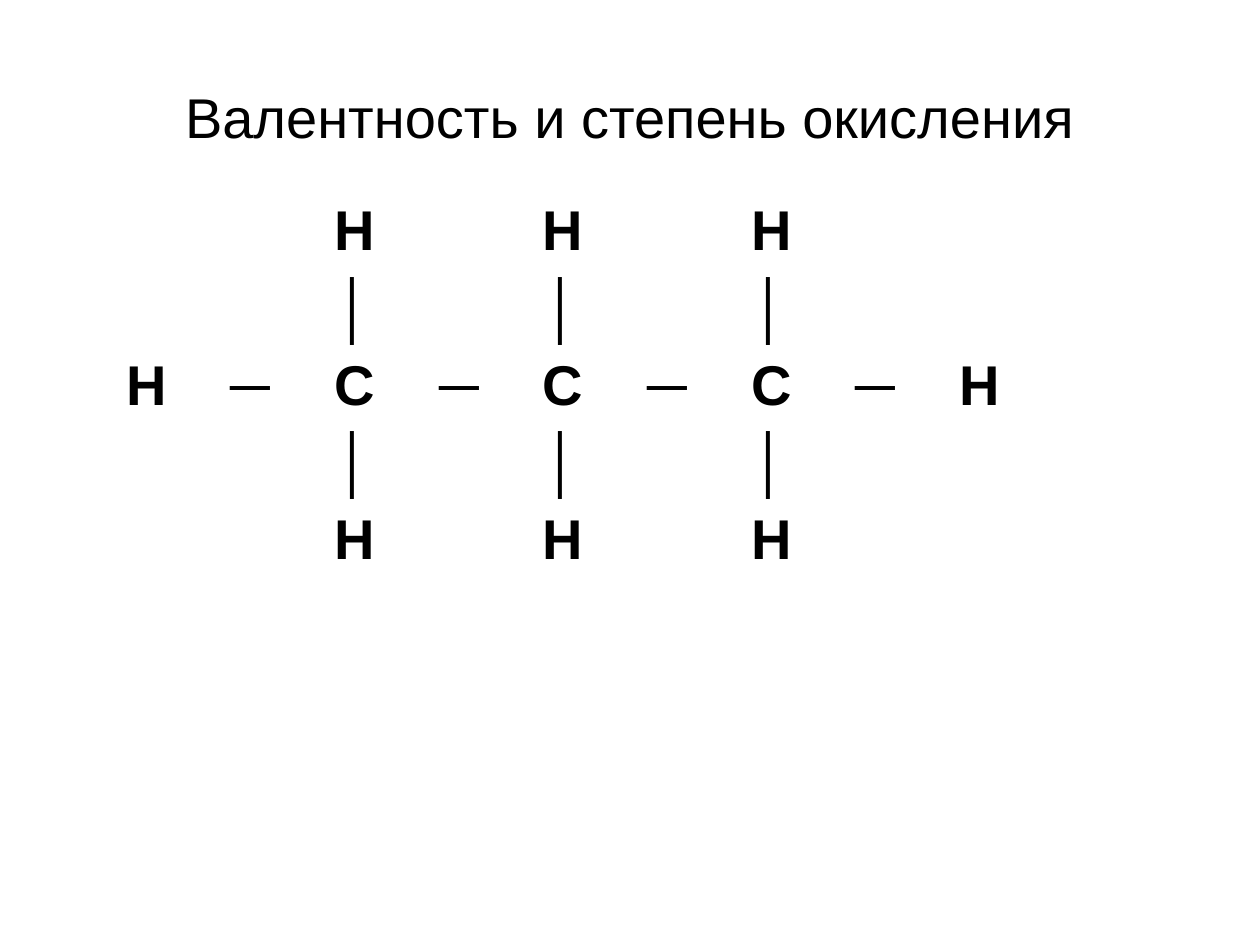
"""Build a slide with the structural formula of propane laid out in a table."""
from pptx import Presentation
from pptx.dml.color import RGBColor
from pptx.enum.text import MSO_ANCHOR as Anchor, PP_ALIGN as Align
from pptx.util import Inches, Pt

TITLE = "Валентность и степень окисления"
FORMULA = [
    "  H H H  ",
    "  │ │ │  ",
    "H─C─C─C─H",
    "  │ │ │  ",
    "  H H H  ",
    "         ",
]
ROW_HEIGHTS = [0.6] * 5 + [0.8]
COLUMN_WIDTH = 7.44 / 9
TITLE_FONT = {"name": "Arial", "size": Pt(32), "bold": False}
ATOM_FONT = {**TITLE_FONT, "bold": True}
CELL_FORMAT = {
    "vertical_anchor": Anchor.MIDDLE,
    "margin_top": Inches(0.04),
    "margin_bottom": Inches(0.04),
}
TABLE_FLAGS = {"first_row": False, "horz_banding": False}


def color(value):
    return RGBColor.from_string(value)


def apply(target, formats):
    for name, value in formats.items():
        setattr(target, name, value)


def write(frame, text, font):
    para = frame.paragraphs[0]
    para.alignment = Align.CENTER
    span = para.add_run()
    span.text = text
    apply(span.font, font)
    span.font.color.rgb = color("000000")


def add_title(page):
    box = page.shapes.add_textbox(Inches(0.5), Inches(0.3), Inches(9), Inches(1.25))
    apply(box.text_frame, {"word_wrap": True, "vertical_anchor": Anchor.MIDDLE})
    write(box.text_frame, TITLE, TITLE_FONT)


def add_formula(page):
    table = page.shapes.add_table(
        len(FORMULA), len(FORMULA[0]),
        Inches(0.75), Inches(1.53), Inches(7.44), Inches(sum(ROW_HEIGHTS)),
    ).table
    apply(table, TABLE_FLAGS)
    for column in table.columns:
        column.width = Inches(COLUMN_WIDTH)
    for row, height, symbols in zip(table.rows, ROW_HEIGHTS, FORMULA):
        row.height = Inches(height)
        for cell, symbol in zip(row.cells, symbols):
            apply(cell, CELL_FORMAT)
            cell.fill.solid()
            cell.fill.fore_color.rgb = color("FFFFFF")
            if symbol != " ":
                write(cell.text_frame, symbol, ATOM_FONT)


def main():
    deck = Presentation()
    apply(deck, {"slide_width": Inches(10), "slide_height": Inches(7.5)})
    page = deck.slides.add_slide(deck.slide_layouts[6])
    add_title(page)
    add_formula(page)
    deck.save("out.pptx")


if __name__ == "__main__":
    main()
